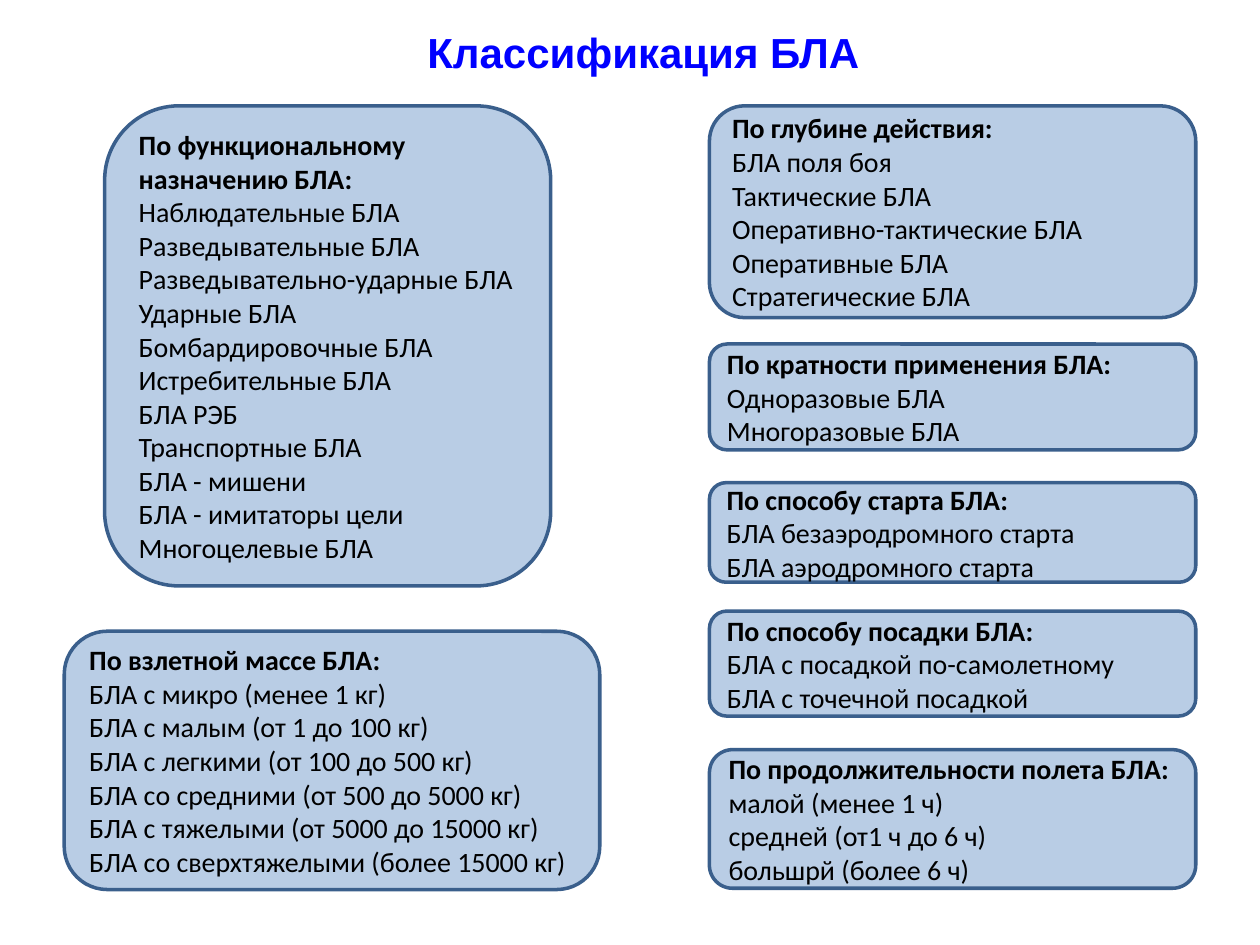
from pptx import Presentation
from pptx.dml.color import RGBColor
from pptx.enum.shapes import MSO_SHAPE as Shape
from pptx.enum.text import MSO_ANCHOR as Anchor, PP_ALIGN as Align
from pptx.util import Pt

RIGHT_X, RIGHT_WIDTH = 405.4, 277.9

# Left column: (left, top, width, height), heading, items
LEFT_GROUPS = [
    ((59.8, 60.5, 254.9, 274.3), "По функциональному назначению БЛА:", [
        "Наблюдательные БЛА", "Разведывательные БЛА",
        "Разведывательно-ударные БЛА", "Ударные БЛА",
        "Бомбардировочные БЛА", "Истребительные БЛА", "БЛА РЭБ",
        "Транспортные БЛА", "БЛА - мишени", "БЛА - имитаторы цели",
        "Многоцелевые БЛА"]),
    ((36.7, 360.7, 306, 147.6), "По взлетной массе БЛА:", [
        "БЛА с микро (менее 1 кг)", "БЛА с малым (от 1 до 100 кг)",
        "БЛА с легкими (от 100 до 500 кг)",
        "БЛА со средними (от 500 до 5000 кг)",
        "БЛА с тяжелыми (от 5000 до 15000 кг)",
        "БЛА со сверхтяжелыми (более 15000 кг)"]),
]

# Right column: top, height, heading, items
RIGHT_GROUPS = [
    (60.5, 121, "По глубине действия:", [
        "БЛА поля боя", "Тактические БЛА", "Оперативно-тактические БЛА",
        "Оперативные БЛА", "Стратегические БЛА"]),
    (196.6, 60.5, "По кратности применения БЛА:", [
        "Одноразовые БЛА", "Многоразовые БЛА"]),
    (275.8, 56.9, "По способу старта БЛА:", [
        "БЛА безаэродромного старта", "БЛА аэродромного старта"]),
    (349.2, 60, "По способу посадки БЛА:", [
        "БЛА с посадкой по-самолетному", "БЛА с точечной посадкой"]),
    (428.4, 79.2, "По продолжительности полета БЛА:", [
        "малой (менее 1 ч)", "средней (от1 ч до 6 ч)",
        "большрй (более 6 ч)"]),
]


def color(hex_value):
    return RGBColor.from_string(hex_value)


def format_span(span, font_name, size, hex_value, bold):
    span.font.name = font_name
    span.font.size = Pt(size)
    span.font.color.rgb = color(hex_value)
    span.font.bold = bold


def place_title(page, bounds, text):
    title = page.shapes.title
    title.left, title.top, title.width, title.height = map(Pt, bounds)
    frame = title.text_frame
    frame.text = text
    frame.word_wrap = True
    frame.vertical_anchor = Anchor.MIDDLE
    para = frame.paragraphs[0]
    para.alignment = Align.CENTER
    format_span(para.runs[0], "Arial", 24, "0000FF", True)


def add_group(page, bounds, heading, items):
    box = page.shapes.add_shape(Shape.ROUNDED_RECTANGLE, *map(Pt, bounds))
    box.shadow.inherit = False
    box.fill.solid()
    box.fill.fore_color.rgb = color("B9CDE5")
    box.line.color.rgb = color("3A5F8C")
    box.line.width = Pt(2)
    frame = box.text_frame
    frame.word_wrap = True
    frame.vertical_anchor = Anchor.MIDDLE
    frame.text = "\n".join([heading, *items])
    for index, para in enumerate(frame.paragraphs):
        para.alignment = Align.LEFT
        format_span(para.runs[0], "Calibri", 16, "000000", index == 0)


def main():
    deck = Presentation()
    deck.slide_width, deck.slide_height = Pt(720), Pt(540)
    page = deck.slides.add_slide(deck.slide_layouts[5])  # title only
    place_title(page, (81.4, 8.6, 572.4, 41.8), "Классификация БЛА")
    for bounds, heading, items in LEFT_GROUPS:
        add_group(page, bounds, heading, items)
    for top, height, heading, items in RIGHT_GROUPS:
        add_group(page, (RIGHT_X, top, RIGHT_WIDTH, height), heading, items)
    deck.save("out.pptx")


if __name__ == "__main__":
    main()
